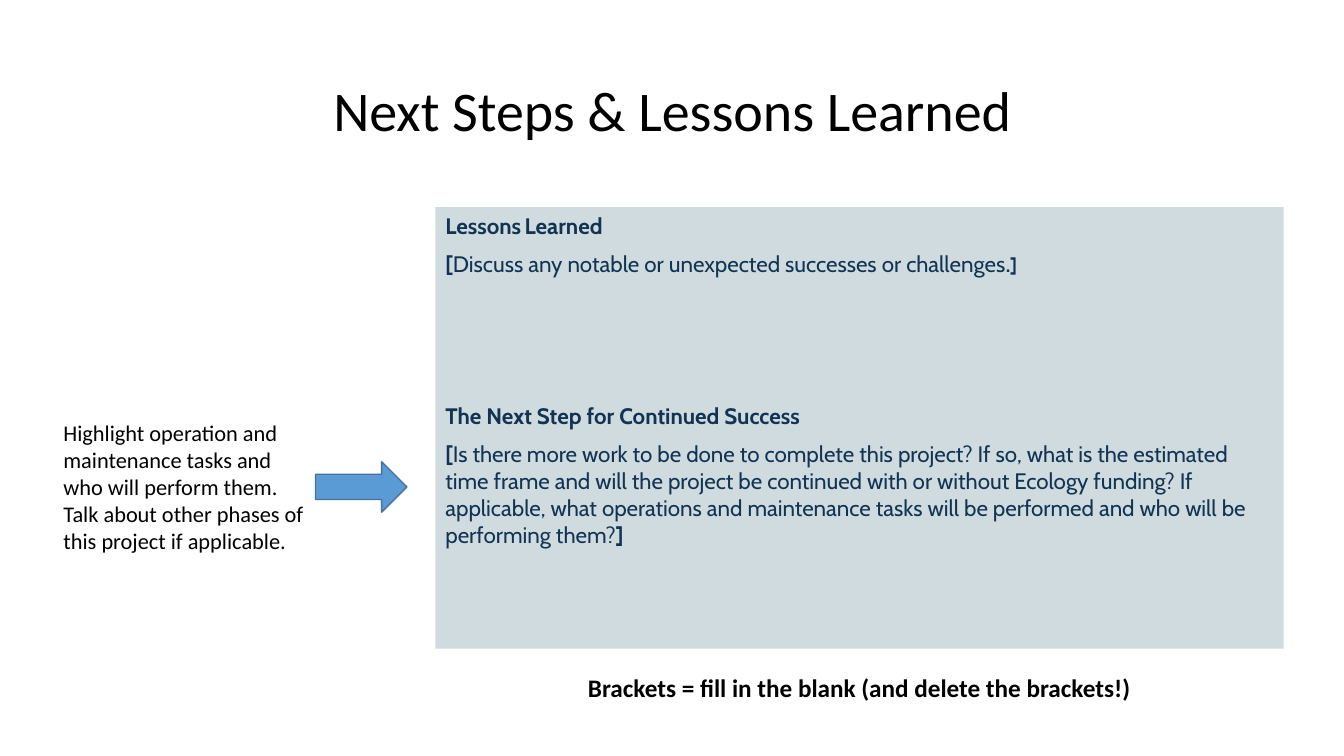
"""Build the "Next Steps & Lessons Learned" slide."""
from dataclasses import dataclass
from typing import Optional

from pptx import Presentation
from pptx.dml.color import RGBColor
from pptx.enum.shapes import MSO_SHAPE as Preset
from pptx.enum.text import MSO_ANCHOR as Anchor, PP_ALIGN as Align
from pptx.util import Inches, Pt

COLORS = {
    "black": "000000",
    "navy": "123452",
    "panel": "D0DBE0",
    "arrow": "5B9BD5",
    "arrow_edge": "43739E",
}
WIDTH, HEIGHT = Inches(13.33), Inches(7.5)


@dataclass(frozen=True)
class Area:
    """A rectangle in percent of the slide's width and height."""
    left: float
    top: float
    width: float
    height: float

    def lengths(self) -> tuple[int, int, int, int]:
        """Return left, top, width and height as slide lengths."""
        return (int(WIDTH * self.left / 100), int(HEIGHT * self.top / 100),
                int(WIDTH * self.width / 100), int(HEIGHT * self.height / 100))


@dataclass(frozen=True)
class Span:
    """A stretch of text with its departures from the paragraph's font."""
    text: str
    bold: Optional[bool] = None
    size: Optional[float] = None


@dataclass(frozen=True)
class Para:
    """A paragraph with its font and spacing."""
    spans: tuple[Span, ...]
    size: float = 16
    font: str = "Calibri"
    color: str = "black"
    bold: bool = False
    align: Align = Align.LEFT
    before: float = 0
    after: float = 0
    line: float = 1


@dataclass(frozen=True)
class Box:
    """A text area, optionally filled."""
    area: Area
    paras: tuple[Para, ...]
    anchor: Anchor = Anchor.TOP
    fill: Optional[str] = None
    wrap: bool = True


def panel_para(*spans: Span, bold: bool = False, before: float = 0) -> Para:
    """Return a paragraph in the panel's style."""
    return Para(spans, font="Cabin", color="navy", bold=bold, before=before, after=8)


BOXES = (
    Box(Area(6.9, 5.33, 86.25, 19.33),
        (Para((Span("Next Steps & Lessons Learned"),), size=40,
              align=Align.CENTER, line=0.9),),
        anchor=Anchor.MIDDLE),
    Box(Area(32.4, 27.4, 63.1, 58.4), (
        panel_para(Span("Lessons"), Span(" ", size=11), Span("Learned"), bold=True),
        panel_para(
            Span("[", bold=True),
            Span("Discuss any notable or unexpected successes or challenges"),
            Span(".]", bold=True, size=14)),
        panel_para(Span("The Next Step for Continued Success"), bold=True, before=81.5),
        panel_para(
            Span("[", bold=True),
            Span("Is there more work to be done to complete this project? If so, "
                 "what is the estimated time frame and will the project be continued "
                 "with or without Ecology funding? If applicable, what operations and "
                 "maintenance tasks will be performed and who will be performing them?"),
            Span("]", bold=True)),
    ), fill="panel"),
    Box(Area(3.98, 54.8, 20.1, 19.33),
        (Para((Span("Highlight operation and maintenance tasks and who will perform "
                    "them. Talk about other phases of this project if applicable."),)),)),
    Box(Area(42.83, 88.27, 42.24, 5.33),
        (Para((Span("Brackets = fill in the blank (and delete the brackets!)"),),
              size=18, bold=True, align=Align.CENTER),),
        wrap=False),
)
ARROW = Area(23.48, 61.07, 6.8, 6.67)


def rgb(name: str) -> RGBColor:
    """Look up a named colour."""
    return RGBColor.from_string(COLORS[name])


def write_para(paragraph, para: Para) -> None:
    """Fill and style one paragraph."""
    paragraph.alignment = para.align
    paragraph.space_before, paragraph.space_after = Pt(para.before), Pt(para.after)
    paragraph.line_spacing = para.line
    font = paragraph.font
    font.name, font.size, font.bold = para.font, Pt(para.size), para.bold
    font.color.rgb = rgb(para.color)
    for span in para.spans:
        run = paragraph.add_run()
        run.text = span.text
        if span.bold is not None:
            run.font.bold = span.bold
        if span.size is not None:
            run.font.size = Pt(span.size)


def draw_box(page, box: Box) -> None:
    """Draw one text area."""
    if box.fill:
        shape = page.shapes.add_shape(Preset.RECTANGLE, *box.area.lengths())
        shape.shadow.inherit = False
        shape.fill.solid()
        shape.fill.fore_color.rgb = rgb(box.fill)
        shape.line.fill.background()
    else:
        shape = page.shapes.add_textbox(*box.area.lengths())
    frame = shape.text_frame
    frame.word_wrap, frame.vertical_anchor = box.wrap, box.anchor
    for index, para in enumerate(box.paras):
        write_para(frame.add_paragraph() if index else frame.paragraphs[0], para)


def draw_arrow(page, area: Area) -> None:
    """Draw the block arrow from the note to the panel."""
    arrow = page.shapes.add_shape(Preset.RIGHT_ARROW, *area.lengths())
    arrow.shadow.inherit = False
    arrow.fill.solid()
    arrow.fill.fore_color.rgb = rgb("arrow")
    arrow.line.color.rgb = rgb("arrow_edge")
    arrow.line.width = Pt(1)


def main() -> None:
    """Build and save the deck."""
    deck = Presentation()
    deck.slide_width, deck.slide_height = WIDTH, HEIGHT
    page = deck.slides.add_slide(deck.slide_layouts[6])
    for box in BOXES:
        draw_box(page, box)
    draw_arrow(page, ARROW)
    deck.save("out.pptx")


if __name__ == "__main__":
    main()
